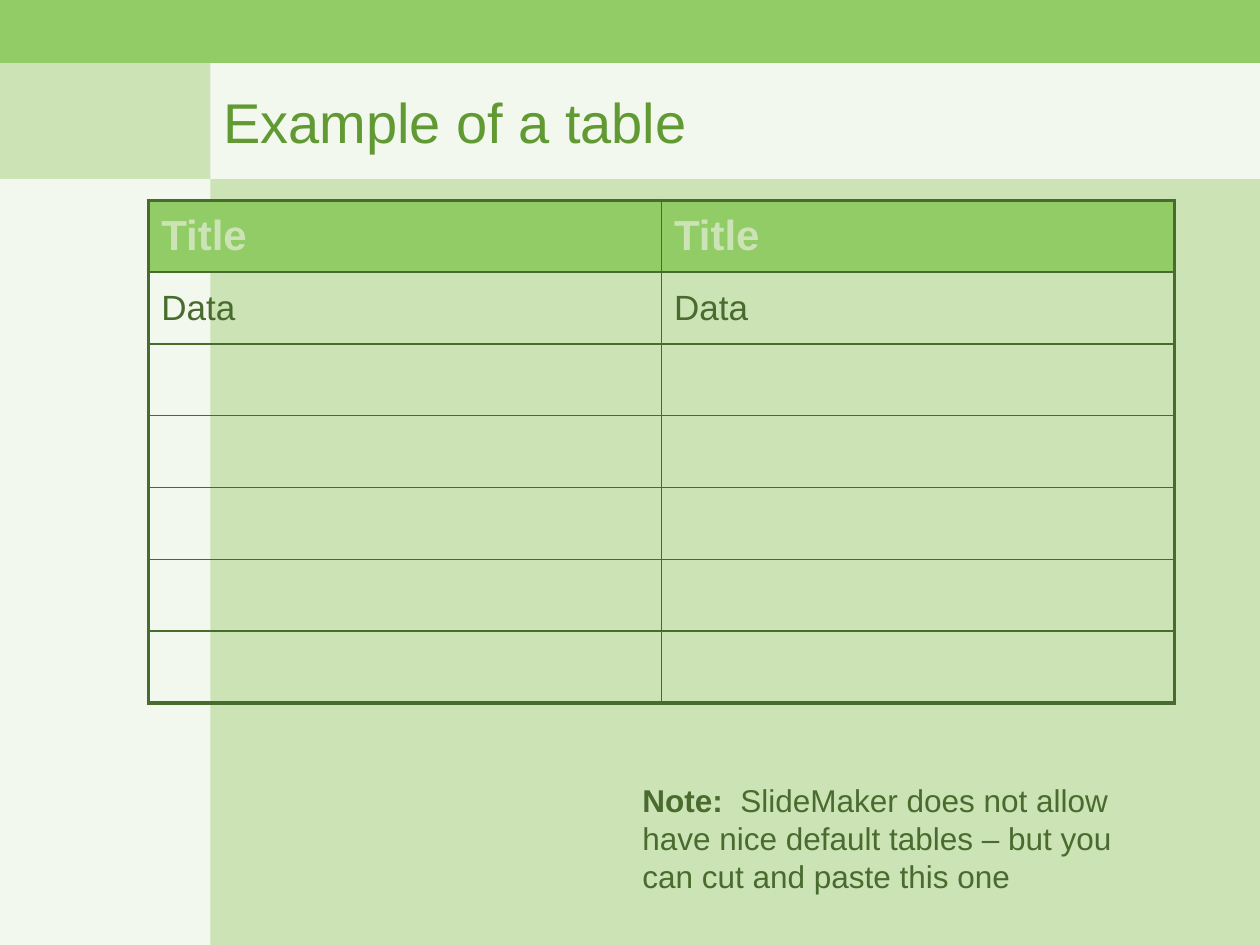
import pptx
import pptx.dml.color
import pptx.enum.shapes
import pptx.enum.text
import pptx.oxml
import pptx.oxml.ns
import pptx.util

RGBColor = pptx.dml.color.RGBColor
Inches = pptx.util.Inches
Pt = pptx.util.Pt

PALE = RGBColor(0xF2, 0xF8, 0xED)
LIGHT = RGBColor(0xCC, 0xE3, 0xB5)
MID = RGBColor(0x92, 0xCC, 0x66)
HEADING = RGBColor(0x61, 0x99, 0x33)
DARK = RGBColor(0x49, 0x6B, 0x2E)

WIDTH, HEIGHT = 10, 7.5
BAND_BOTTOM, TITLE_BOTTOM, SIDEBAR = 0.5, 1.42, 1.67
ROWS, COLUMNS = 7, 2
ROW_HEIGHT, COLUMN_WIDTH = 0.57, 4.07
OUTER, INNER = 2.25, 1
ENTRIES = [["Title", "Title"], ["Data", "Data"]]


def box(left, top, width, height):
    """Convert a position and size in inches to lengths."""
    return [Inches(value) for value in (left, top, width, height)]


def style(run, size, color, bold=False):
    """Format one run of text."""
    run.font.name = "Arial"
    run.font.size = Pt(size)
    run.font.bold = bold
    run.font.color.rgb = color


def add_panel(slide, bounds, color):
    """Add a plain background rectangle."""
    panel = slide.shapes.add_shape(
        pptx.enum.shapes.MSO_SHAPE.RECTANGLE, *box(*bounds))
    panel.shadow.inherit = False
    panel.fill.solid()
    panel.fill.fore_color.rgb = color
    panel.line.fill.background()


def set_title(slide, text):
    """Place and format the title placeholder."""
    title = slide.shapes.title
    title.left, title.top, title.width, title.height = box(
        SIDEBAR, BAND_BOTTOM, WIDTH - SIDEBAR, TITLE_BOTTOM - BAND_BOTTOM)
    title.fill.solid()
    title.fill.fore_color.rgb = PALE
    title.text_frame.text = text
    title.text_frame.vertical_anchor = pptx.enum.text.MSO_ANCHOR.MIDDLE
    heading = title.text_frame.paragraphs[0]
    heading.alignment = pptx.enum.text.PP_ALIGN.LEFT
    style(heading.runs[0], 32, HEADING)


def set_borders(cell, row, column):
    """Draw thick lines on the table's edge and thin ones inside."""
    on_edge = {"L": column == 0, "R": column == COLUMNS - 1,
               "T": row == 0, "B": row == ROWS - 1}
    namespace = pptx.oxml.ns.nsdecls("a")
    properties = cell._tc.get_or_add_tcPr()
    for position, (side, outer) in enumerate(on_edge.items()):
        width = Pt(OUTER if outer else INNER)
        properties.insert(position, pptx.oxml.parse_xml(
            f'<a:ln{side} {namespace} w="{width}"><a:solidFill>'
            f'<a:srgbClr val="{DARK}"/></a:solidFill></a:ln{side}>'))


def fill_cell(cell, row, column):
    """Set a cell's fill, text and borders."""
    header = row == 0
    if header:
        cell.fill.solid()
        cell.fill.fore_color.rgb = MID
    else:
        cell.fill.background()
    cell.vertical_anchor = pptx.enum.text.MSO_ANCHOR.MIDDLE
    if row < len(ENTRIES):
        cell.text_frame.text = ENTRIES[row][column]
        entry = cell.text_frame.paragraphs[0].runs[0]
        style(entry, 24 if header else 20, LIGHT if header else DARK, header)
    set_borders(cell, row, column)


def add_data_table(slide):
    """Add the table with its header row."""
    bounds = box(1.18, 1.59, COLUMNS * COLUMN_WIDTH, ROWS * ROW_HEIGHT)
    table = slide.shapes.add_table(ROWS, COLUMNS, *bounds).table
    table.first_row = table.horz_banding = False
    for row in range(ROWS):
        for column in range(COLUMNS):
            fill_cell(table.cell(row, column), row, column)


def add_note(slide, label, text):
    """Add a note that opens with a bold label."""
    frame = slide.shapes.add_textbox(*box(WIDTH / 2, 6.15, 4.21, 1)).text_frame
    frame.word_wrap = True
    for words, bold in ((label, True), (text, False)):
        run = frame.paragraphs[0].add_run()
        run.text = words
        style(run, 18, DARK, bold)


def main():
    """Build and save the slide."""
    deck = pptx.Presentation()
    deck.slide_width, deck.slide_height = Inches(WIDTH), Inches(HEIGHT)
    slide = deck.slides.add_slide(deck.slide_layouts[5])
    slide.background.fill.solid()
    slide.background.fill.fore_color.rgb = LIGHT
    add_panel(slide, (0, 0, WIDTH, BAND_BOTTOM), MID)
    add_panel(slide, (0, TITLE_BOTTOM, SIDEBAR, HEIGHT - TITLE_BOTTOM), PALE)
    set_title(slide, "Example of a table")
    add_data_table(slide)
    add_note(slide, "Note:  ",
             "SlideMaker does not allow have nice default tables – "
             "but you can cut and paste this one")
    deck.save("out.pptx")


if __name__ == "__main__":
    main()
